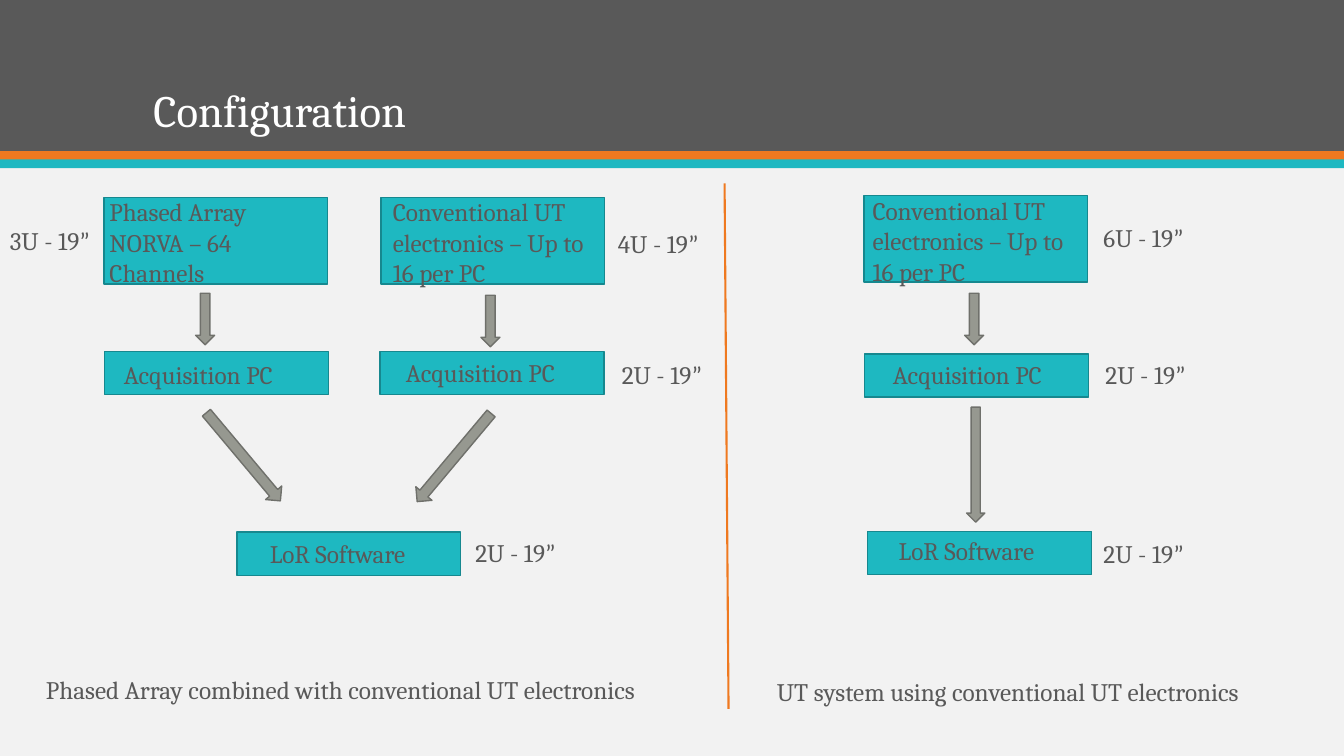
from lxml import etree
from pptx import Presentation
from pptx.dml.color import RGBColor
from pptx.enum.shapes import MSO_CONNECTOR, MSO_SHAPE
from pptx.enum.text import MSO_ANCHOR, MSO_AUTO_SIZE, PP_ALIGN
from pptx.oxml.ns import qn
from pptx.util import Cm, Pt

RECT, DOWN = MSO_SHAPE.RECTANGLE, MSO_SHAPE.DOWN_ARROW
LINE = MSO_CONNECTOR.STRAIGHT
LEFT, LOW = PP_ALIGN.LEFT, MSO_ANCHOR.BOTTOM
GROW, FIXED = MSO_AUTO_SIZE.SHAPE_TO_FIT_TEXT, MSO_AUTO_SIZE.NONE
DARK, ORANGE, TEAL, GREY = "595959", "EF7920", "1EB8C1", "969890"
EDGE, RIM = "16888F", "6F706B"


def paint(color, code):
    color.rgb = RGBColor.from_string(code)


def draw(kind, place, fill, edge=None):
    shape = slide.shapes.add_shape(kind, *map(Cm, place))
    shape.shadow.inherit = False
    shape.fill.solid()
    paint(shape.fill.fore_color, fill)
    if edge:
        paint(shape.line.color, edge)
        shape.line.width = Pt(1)
    else:
        shape.line.fill.background()
    return shape


deck = Presentation()
deck.slide_width, deck.slide_height = Cm(33.87), Cm(19.05)
slide = deck.slides.add_slide(deck.slide_layouts[5])
slide.background.fill.solid()
paint(slide.background.fill.fore_color, "F2F2F2")

# Header bands
for top, high, fill in [(0, 3.81, DARK), (3.81, 0.22, ORANGE), (4.02, 0.22, TEAL)]:
    draw(RECT, (0, top, 33.87, high), fill)

# Title, brought in front of the bands
title = slide.shapes.title
slide.shapes._spTree.append(title._element)
title.left, title.top, title.width, title.height = map(Cm, (3.61, 0.71, 26.67, 2.87))
frame = title.text_frame
frame.text = "Configuration"
for name, value in {"vertical_anchor": LOW, "auto_size": FIXED, "word_wrap": True}.items():
    setattr(frame, name, value)
para = frame.paragraphs[0]
para.alignment, para.line_spacing = LEFT, 0.9
for name, value in {"size": Pt(32), "name": "Cambria"}.items():
    setattr(para.font, name, value)
paint(para.font.color, "FFFFFF")

# Boxes: left, top, height
tall, low = 2.18, 1.09
for left, top, high in [
    (2.62, 4.98, tall), (9.6, 4.98, tall), (21.77, 4.93, tall),
    (9.58, 8.86, low), (2.64, 8.86, low), (5.97, 13.41, low),
    (21.79, 8.92, low), (21.87, 13.39, low),
]:
    draw(RECT, (left, top, 5.64, high), TEAL, EDGE)

# Divider between the two systems
rule = slide.shapes.add_connector(LINE, Cm(18.26), Cm(4.62), Cm(18.36), Cm(17.86))
paint(rule.line.color, ORANGE)
rule.line.width = Pt(1.5)
etree.SubElement(rule._element.spPr, qn("a:effectLst"))

# Flow arrows: left, top, width, height, turn
for *place, turn in [
    (4.93, 7.39, 0.48, 1.3, 0), (12.12, 7.44, 0.48, 1.3, 0),
    (24.31, 7.39, 0.48, 1.3, 0), (5.87, 10.06, 0.53, 2.9, 320),
    (11.18, 10.08, 0.53, 2.9, 40), (24.36, 10.26, 0.46, 2.9, 0),
]:
    draw(DOWN, place, GREY, RIM).rotation = turn

# Texts: left, top, width, height, words
phased = "Phased Array NORVA – 64 Channels"
usual = "Conventional UT electronics – Up to 16 per PC"
notes = [
    (2.51, 4.83, 5.49, 2.57, phased),
    (9.65, 4.83, 5.49, 2.57, usual),
    (21.74, 4.8, 5.49, 2.57, usual),
    (0.91, 16.87, 17.48, 1.02, "Phased Array combined with conventional UT electronics"),
    (19.33, 16.92, 14, 1.02, "UT system using conventional UT electronics"),
]
for words, spots in {
    "Acquisition PC": [(2.87, 8.94), (9.98, 8.89), (22.25, 8.92)],
    "LoR Software": [(6.55, 13.44), (22.4, 13.36)],
}.items():
    notes += [(left, top, 5.49, 1.02, words) for left, top in spots]

# Rack heights
for left, top, units in [
    (15.32, 5.64, 4), (15.42, 8.94, 2), (11.73, 13.41, 2), (27.56, 13.44, 2),
    (27.61, 8.94, 2), (27.56, 5.49, 6), (0, 5.56, 3),
]:
    notes.append((left, top, 3, 1.02, f"{units}U - 19”"))

for *place, words in notes:
    frame = slide.shapes.add_textbox(*map(Cm, place)).text_frame
    frame.word_wrap, frame.auto_size = True, GROW
    body, quote = words.rstrip("”"), "”" if words.endswith("”") else ""
    for part, face in [(body, "Cambria"), (quote, "Calibri")]:
        if part:
            run = frame.paragraphs[0].add_run()
            run.text = part
            for name, value in {"size": Pt(18), "name": face}.items():
                setattr(run.font, name, value)
            paint(run.font.color, DARK)

deck.save("out.pptx")
